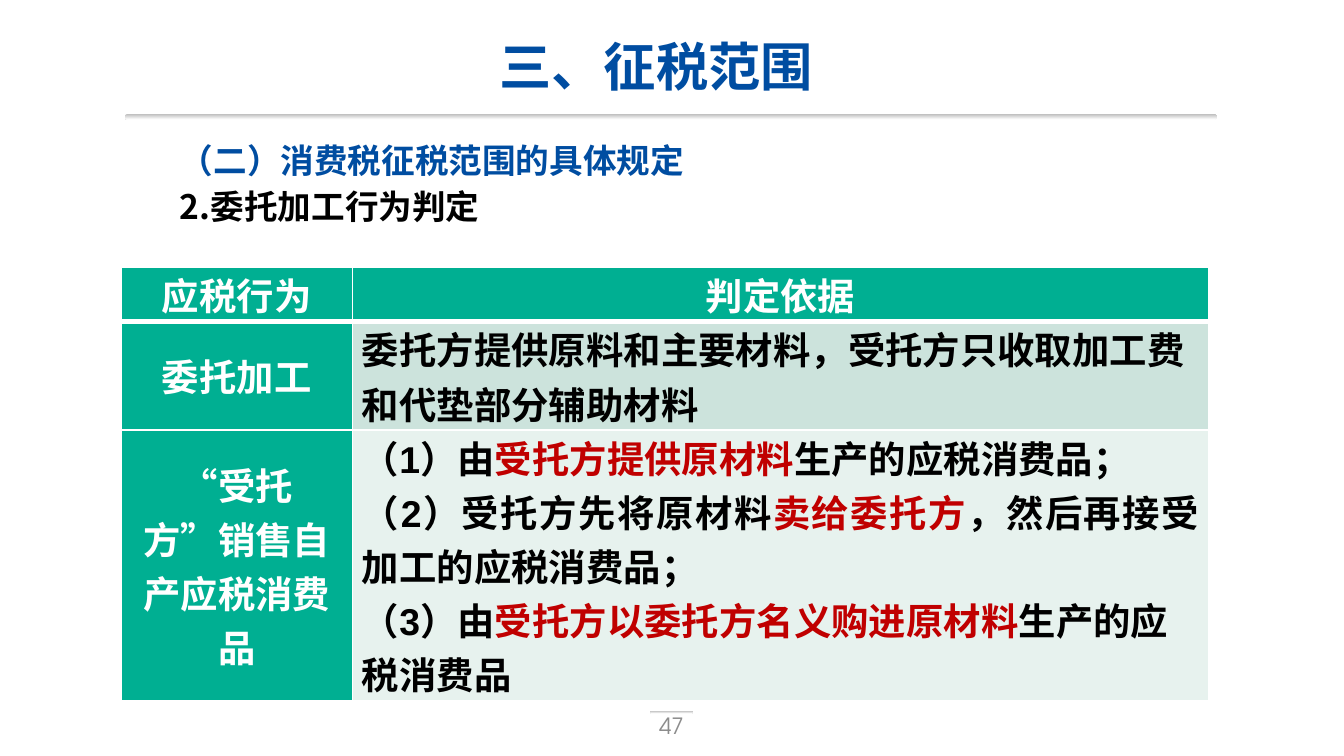
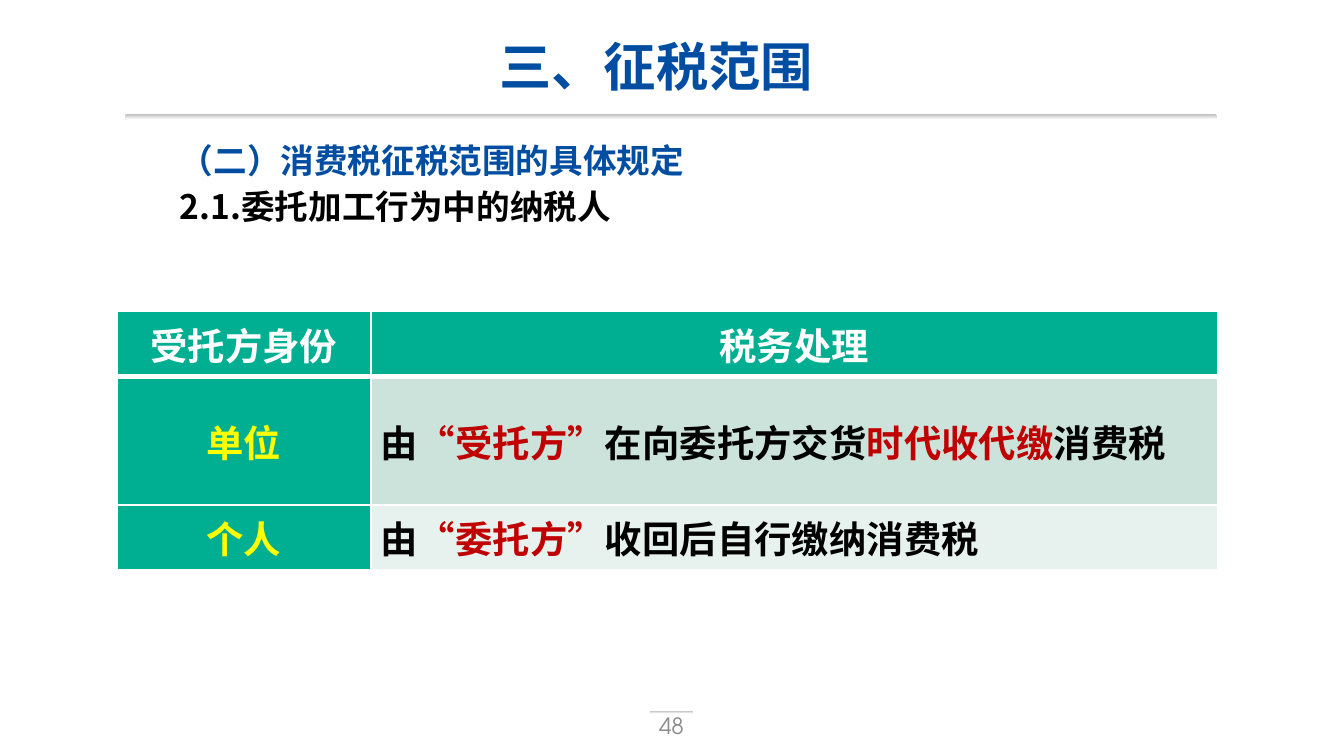
import pptx
import pptx.dml.color
import pptx.enum.shapes
import pptx.enum.text
import pptx.oxml
import pptx.oxml.ns
import pptx.util
from lxml import etree

Cm = pptx.util.Cm
Pt = pptx.util.Pt
ALIGN = pptx.enum.text.PP_ALIGN
ANCHOR = pptx.enum.text.MSO_ANCHOR
qn = pptx.oxml.ns.qn

BLUE, BLACK, WHITE = "004DA1", "000000", "FFFFFF"
GREEN, RED, YELLOW = "00AF92", "C00000", "FFFF00"
BANDS = ["CCE3DC", "E7F2EE"]
RULE_GREY, NUMBER_GREY = "BFBFBF", "8C8C8C"
CJK = "Noto Sans CJK SC"


def rgb(value):
    return pptx.dml.color.RGBColor.from_string(value)


def format_run(r, size, color, font=CJK, bold=True):
    r.font.size = Pt(size)
    r.font.bold = bold
    r.font.color.rgb = rgb(color)
    r.font.name = font
    ea = etree.SubElement(r.font._element, qn("a:ea"))
    ea.set("typeface", CJK)


def set_frame(tf, anchor, x=0.18, top=0.1, bottom=0.1):
    tf.word_wrap = True
    tf.auto_size = pptx.enum.text.MSO_AUTO_SIZE.NONE
    tf.vertical_anchor = anchor
    tf.margin_left = tf.margin_right = Cm(x)
    tf.margin_top, tf.margin_bottom = Cm(top), Cm(bottom)


def place(sp, left, top, width, height):
    sp.left, sp.top, sp.width, sp.height = map(Cm, (left, top, width, height))


def add_rule(slide, left, top, width, height):
    """Thin rounded bar that fades from grey to white."""
    sp = slide.shapes.add_shape(
        pptx.enum.shapes.MSO_SHAPE.ROUNDED_RECTANGLE,
        Cm(left), Cm(top), Cm(width), Cm(height))
    sp.adjustments[0] = 0.5
    sp.shadow.inherit = False
    sp.line.fill.background()
    sp.fill.gradient()
    sp.fill.gradient_angle = 270
    for stop, color in zip(sp.fill.gradient_stops, (RULE_GREY, WHITE)):
        stop.color.rgb = rgb(color)


def add_page_number(slide, number):
    add_rule(slide, 12.29, 13.44, 0.81, 0.05)
    sp = slide.shapes.add_textbox(Cm(9.73), Cm(13.34), Cm(5.92), Cm(0.76))
    set_frame(sp.text_frame, ANCHOR.MIDDLE)
    p = sp.text_frame.paragraphs[0]
    p.text = str(number)
    p.alignment = ALIGN.CENTER
    format_run(p.runs[0], 12, NUMBER_GREY, "TeX Gyre Adventor", False)


def set_title(slide, text):
    sp = slide.shapes.title
    place(sp, 2.29, 0.64, 20.22, 1.4)
    set_frame(sp.text_frame, ANCHOR.TOP, top=0)
    sp.text_frame.text = text
    p = sp.text_frame.paragraphs[0]
    p.alignment = ALIGN.CENTER
    format_run(p.runs[0], 28, BLUE)


def set_headings(slide, section, topic):
    sp = slide.placeholders[1]
    place(sp, 1.65, 2.31, 22.81, 11.4)
    tf = sp.text_frame
    set_frame(tf, ANCHOR.TOP, x=0.25, top=0.22)
    tf.text = section
    tf.add_paragraph().text = topic
    for p, color in zip(tf.paragraphs, (BLUE, BLACK)):
        pPr = p._p.get_or_add_pPr()
        pPr.set("marL", "0")
        pPr.set("indent", str(Cm(1.5)))
        etree.SubElement(pPr, qn("a:buNone"))
        p.alignment = ALIGN.LEFT
        p.line_spacing = 1.15
        p.space_before = Pt(0)
        format_run(p.runs[0], 18, color)


def add_slide(prs, number, topic):
    slide = prs.slides.add_slide(prs.slide_layouts[1])
    add_rule(slide, 2.36, 2.16, 20.65, 0.1)
    add_page_number(slide, number)
    set_title(slide, "三、征税范围")
    set_headings(slide, "（二）消费税征税范围的具体规定", topic)
    return slide


def set_borders(cell, top, bottom):
    tcPr = cell._tc.get_or_add_tcPr()
    widths = {"lnL": 1, "lnR": 1, "lnT": top, "lnB": bottom}
    for i, (side, width) in enumerate(widths.items()):
        ln = etree.Element(qn("a:" + side), w=str(Pt(width)))
        fill = etree.SubElement(ln, qn("a:solidFill"))
        etree.SubElement(fill, qn("a:srgbClr"), val=WHITE)
        tcPr.insert(i, ln)


def write_cell(cell, text, color, align):
    """Write one paragraph a line; text between bars is red."""
    cell.vertical_anchor = ANCHOR.MIDDLE
    cell.margin_left = cell.margin_right = Cm(0.18)
    cell.margin_top = cell.margin_bottom = 0
    tf = cell.text_frame
    lines = text.split("\n")
    for i, line in enumerate(lines):
        p = tf.add_paragraph() if i else tf.paragraphs[0]
        is_last = i == len(lines) - 1
        p.alignment = align if is_last else ALIGN.JUSTIFY
        for j, part in enumerate(line.split("|")):
            r = p.add_run()
            r.text = part
            format_run(r, 20, RED if j % 2 else color, "Arial")


def add_rule_table(slide, left, top, widths, heights, rows, label_color=WHITE):
    """Table with a green header row and a green first column."""
    table = slide.shapes.add_table(
        len(rows), len(widths), Cm(left), Cm(top),
        Cm(sum(widths)), Cm(sum(heights))).table
    for column, width in zip(table.columns, widths):
        column.width = Cm(width)
    for i, (row, height) in enumerate(zip(rows, heights)):
        table.rows[i].height = Cm(height)
        for j, text in enumerate(row):
            cell = table.cell(i, j)
            is_body = i > 0 and j > 0
            cell.fill.solid()
            cell.fill.fore_color.rgb = rgb(BANDS[i - 1] if is_body else GREEN)
            set_borders(cell, 3 if i == 1 else 1, 3 if i == 0 else 1)
            color = BLACK if is_body else label_color if i else WHITE
            write_cell(cell, text, color,
                       ALIGN.LEFT if is_body else ALIGN.CENTER)


def main():
    prs = pptx.Presentation()
    prs.slide_width, prs.slide_height = Cm(25.4), Cm(14.29)

    slide = add_slide(prs, 47, "2.委托加工行为判定")
    add_rule_table(slide, 2.29, 5.05, [4.37, 16.18], [0.99, 2.01, 5], [
        ("应税行为", "判定依据"),
        ("委托加工",
         "委托方提供原料和主要材料，受托方只收取加工费和代垫部分辅助材料"),
        ("“受托方”销售自产应税消费品",
         "（1）由|受托方提供原材料|生产的应税消费品；\n"
         "（2）受托方先将原材料|卖给委托方|，然后再接受加工的应税消费品；\n"
         "（3）由|受托方以委托方名义购进原材料|生产的应税消费品"),
    ])

    slide = add_slide(prs, 48, "2.1.委托加工行为中的纳税人")
    add_rule_table(slide, 2.21, 5.89, [4.8, 16], [1.22, 2.44, 1.22], [
        ("受托方身份", "税务处理"),
        ("单位", "由|“受托方”|在向委托方交货|时代收代缴|消费税"),
        ("个人", "由|“委托方”|收回后自行缴纳消费税"),
    ], label_color=YELLOW)

    prs.save("out.pptx")


if __name__ == "__main__":
    main()
